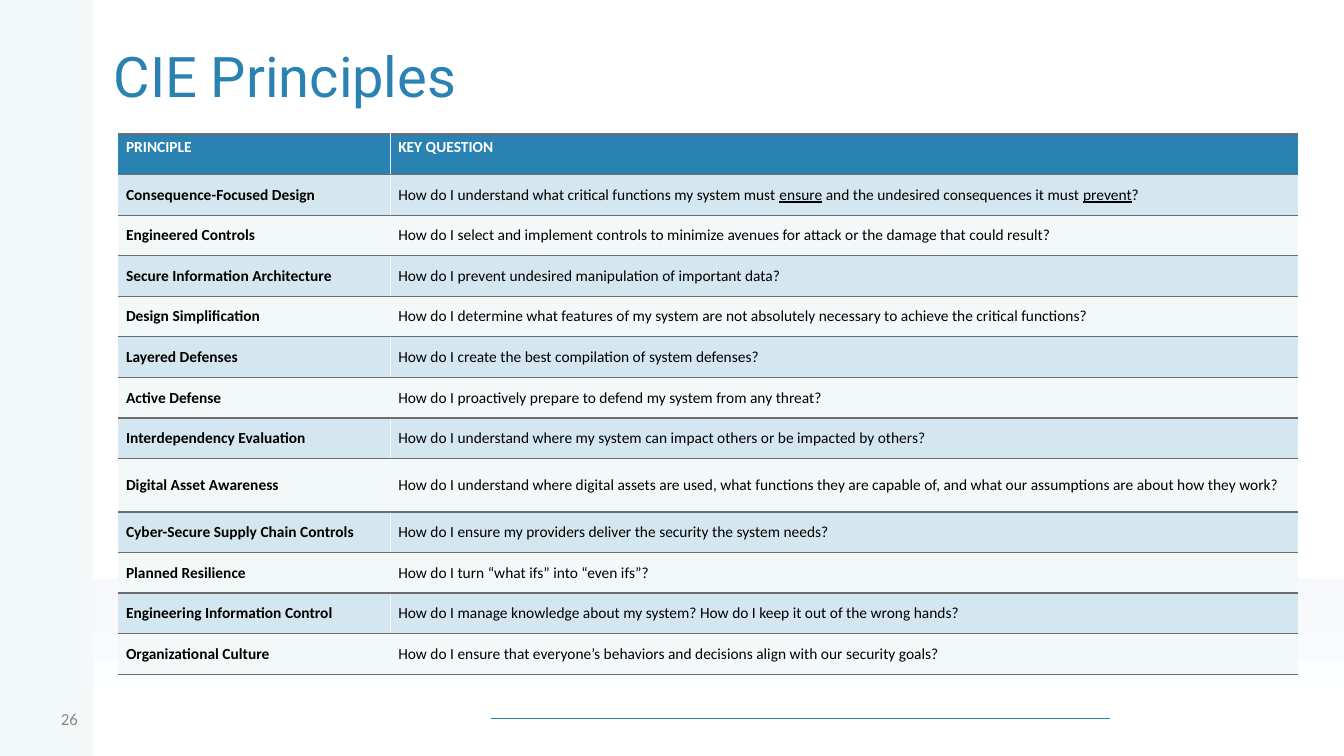
from lxml import etree
from pptx import Presentation
from pptx.dml.color import RGBColor
from pptx.enum.shapes import MSO_CONNECTOR, MSO_SHAPE
from pptx.enum.text import MSO_ANCHOR, PP_ALIGN
from pptx.oxml.ns import qn
from pptx.util import Inches, Pt

RECT = MSO_SHAPE.RECTANGLE
LINE = MSO_CONNECTOR.STRAIGHT
TOP, MIDDLE = MSO_ANCHOR.TOP, MSO_ANCHOR.MIDDLE
LEFT, RIGHT = PP_ALIGN.LEFT, PP_ALIGN.RIGHT

COLORS = {
    "blue": "2982B1",
    "pale": "D4E6EF",
    "mist": "F3F8F9",
    "haze": "F6F8FC",
    "white": "FFFFFF",
    "black": "000000",
    "gray": "898989",
    "rule": "6E6D6E",
    "split": "F4F7FC",
}

HEAD = ("PRINCIPLE", "KEY QUESTION")
# Underscores enclose underlined words.
ROWS = [
    ("Consequence-Focused Design",
     "How do I understand what critical functions my system must _ensure_ "
     "and the undesired consequences it must _prevent_?"),
    ("Engineered Controls",
     "How do I select and implement controls to minimize avenues for attack "
     "or the damage that could result?"),
    ("Secure Information Architecture",
     "How do I prevent undesired manipulation of important data?"),
    ("Design Simplification",
     "How do I determine what features of my system are not absolutely "
     "necessary to achieve the critical functions?"),
    ("Layered Defenses",
     "How do I create the best compilation of system defenses?"),
    ("Active Defense",
     "How do I proactively prepare to defend my system from any threat?"),
    ("Interdependency Evaluation",
     "How do I understand where my system can impact others or be impacted "
     "by others?"),
    ("Digital Asset Awareness",
     "How do I understand where digital assets are used, what functions they "
     "are capable of, and what our assumptions are about how they work?"),
    ("Cyber-Secure Supply Chain Controls",
     "How do I ensure my providers deliver the security the system needs?"),
    ("Planned Resilience",
     "How do I turn “what ifs” into “even ifs”?"),
    ("Engineering Information Control",
     "How do I manage knowledge about my system? How do I keep it out of the "
     "wrong hands?"),
    ("Organizational Culture",
     "How do I ensure that everyone’s behaviors and decisions align with our "
     "security goals?"),
]
WIDTHS = (2.7, 9)
HEIGHT = 5.36
TALL_ROW, TALL = 8, 0.53


def rgb(name):
    return RGBColor.from_string(COLORS[name])


def set_font(para, face, size, color, bold=False):
    font = para.font
    font.name, font.size, font.bold = face, Pt(size), bold
    font.color.rgb = rgb(color)


def add_rect(slide, *box):
    shape = slide.shapes.add_shape(RECT, *map(Inches, box))
    shape.shadow.inherit = False
    shape.line.fill.background()
    return shape


def add_haze(slide):
    """Add the faint gradient along the foot of the slide."""
    haze = add_rect(slide, 5.79, -0.05, 1.76, 13.33)
    haze.rotation = 270
    haze.fill.gradient()
    haze.fill.gradient_angle = 180
    stops = ((0.16, "haze"), (0.78, "white"))
    for stop, (place, color) in zip(haze.fill.gradient_stops, stops):
        stop.position = place
        stop.color.rgb = rgb(color)


def add_rule(slide, x1, x2, y):
    rule = slide.shapes.add_connector(LINE, *map(Inches, (x1, y, x2, y)))
    rule.line.color.rgb = rgb("blue")
    rule.line.width = Pt(0.75)
    etree.SubElement(rule._element.spPr, qn("a:effectLst"))


def add_text(slide, box, text, face, size, color, align=LEFT):
    frame = slide.shapes.add_textbox(*map(Inches, box)).text_frame
    frame.word_wrap = True
    frame.vertical_anchor = MIDDLE
    para = frame.paragraphs[0]
    para.text = text
    para.alignment = align
    set_font(para, face, size, color)
    return para


def add_edge(cell, side, color=None, width=0.5):
    """Draw one cell border, or clear it when no color is given."""
    edge = etree.SubElement(cell._tc.get_or_add_tcPr(), qn("a:ln" + side))
    edge.set("w", str(Pt(width)))
    if color:
        fill = etree.SubElement(edge, qn("a:solidFill"))
        etree.SubElement(fill, qn("a:srgbClr")).set("val", COLORS[color])
    else:
        etree.SubElement(edge, qn("a:noFill"))


def fill_cell(cell, text, col, fill, color, bold, anchor):
    add_edge(cell, "L", "split" if col else None)
    add_edge(cell, "R", None if col else "split")
    for side in "TB":
        add_edge(cell, side, "rule", 1.04)
    cell.fill.solid()
    cell.fill.fore_color.rgb = rgb(fill)
    cell.margin_left = cell.margin_right = Inches(0.08)
    cell.margin_top = cell.margin_bottom = Inches(0.04)
    cell.vertical_anchor = anchor
    para = cell.text_frame.paragraphs[0]
    set_font(para, "Calibri", 11, color, bold)
    for i, part in enumerate(text.split("_")):
        run = para.add_run()
        run.text = part
        if i % 2:
            run.font.underline = True


def add_grid(slide):
    count = len(ROWS) + 1
    box = map(Inches, (1.17, 1.33, sum(WIDTHS), HEIGHT))
    table = slide.shapes.add_table(count, len(WIDTHS), *box).table
    table.first_row = table.horz_banding = False
    for col, width in zip(table.columns, WIDTHS):
        col.width = Inches(width)
    for row in table.rows:
        row.height = Inches((HEIGHT - TALL) / (count - 1))
    table.rows[TALL_ROW].height = Inches(TALL)
    for col, text in enumerate(HEAD):
        fill_cell(table.cell(0, col), text, col, "blue", "white", True, TOP)
    for row, texts in enumerate(ROWS, 1):
        fill = "pale" if row % 2 else "mist"
        for col, text in enumerate(texts):
            fill_cell(table.cell(row, col), text, col, fill, "black",
                      col == 0, MIDDLE)


def main():
    deck = Presentation()
    deck.slide_width, deck.slide_height = Inches(13.33), Inches(7.5)
    slide = deck.slides.add_slide(deck.slide_layouts[6])
    add_haze(slide)
    add_rule(slide, 4.87, 11.01, 7.13)
    band = add_rect(slide, 0, 0, 0.92, 7.5)
    band.fill.solid()
    band.fill.fore_color.rgb = rgb("mist")
    title = add_text(slide, (1.03, 0.4, 11.74, 0.77), "CIE Principles",
                     "Roboto", 40, "blue")
    title.line_spacing = 0.9
    add_grid(slide)
    add_text(slide, (0.23, 6.93, 0.64, 0.4), "26", "Calibri", 12, "gray",
             RIGHT)
    deck.save("out.pptx")


if __name__ == "__main__":
    main()
